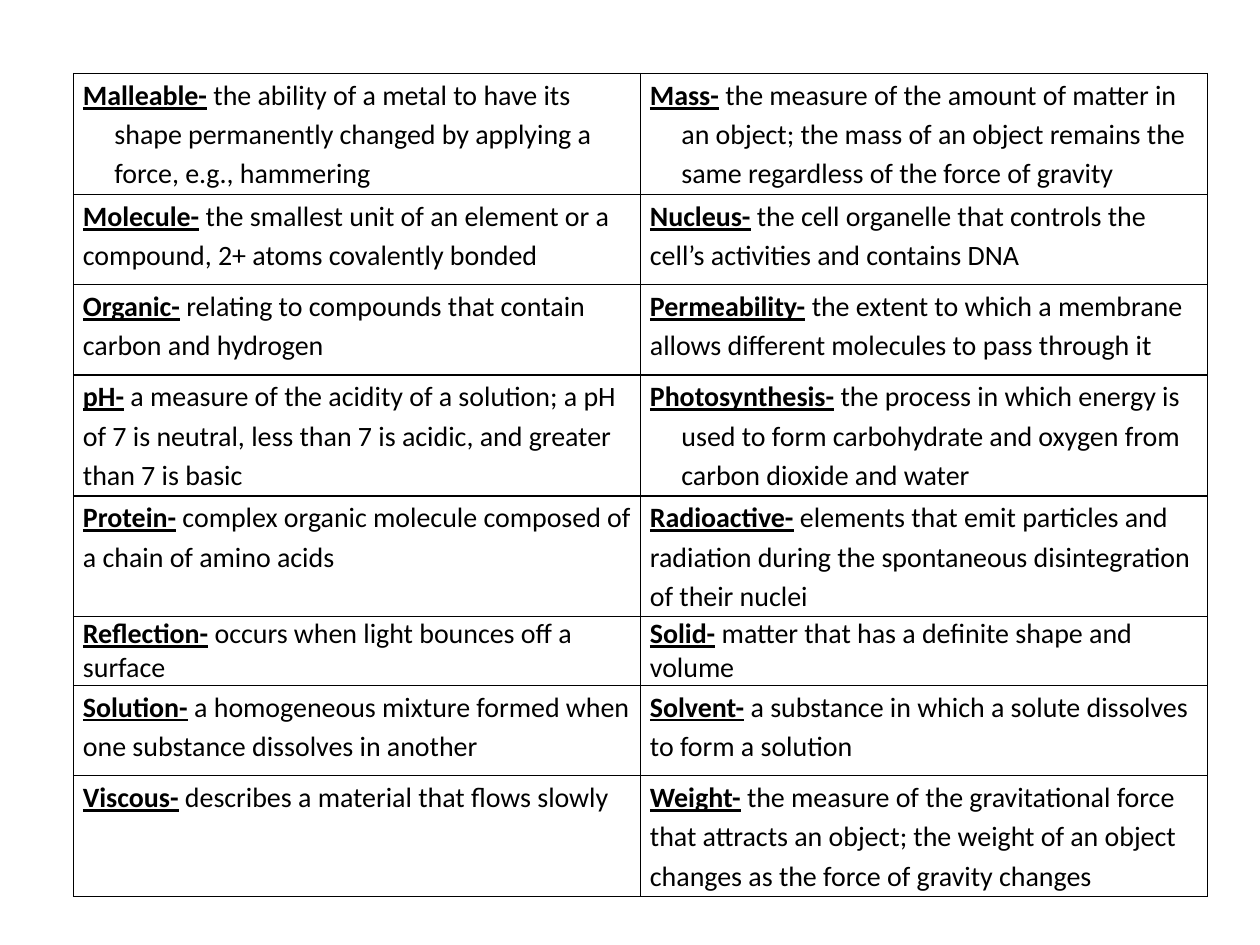
import pptx
import pptx.util
import pptx.dml.color
import pptx.oxml
import pptx.oxml.ns

Pt = pptx.util.Pt
COLORS = {"ink": "000000", "paper": "FFFFFF"}
FONT, FONT_SIZE = "Calibri", 16
LEFT, TOP, COLUMN_WIDTH = 42, 42, 324
INSET, HANG, BORDER = 5.4, 18, 1
TALL, MEDIUM, SHORT = 69.1, 51.6, 31
SPACING = 1.15

# Each row: height, line spacing, then (term, definition, hanging indent) per cell
ROWS = [
    (TALL, SPACING, [
        ("Malleable-", "the ability of a metal to have its shape permanently "
         "changed by applying a force, e.g., hammering", True),
        ("Mass-", "the measure of the amount of matter in an object; the mass of an "
         "object remains the same regardless of the force of gravity", True)]),
    (MEDIUM, SPACING, [
        ("Molecule-", "the smallest unit of an element or a compound, "
         "2+ atoms covalently bonded", False),
        ("Nucleus-", "the cell organelle that controls the cell’s activities "
         "and contains DNA", False)]),
    (MEDIUM, SPACING, [
        ("Organic-", "relating to compounds that contain carbon and hydrogen", False),
        ("Permeability-", "the extent to which a membrane allows different "
         "molecules to pass through it", False)]),
    (TALL, SPACING, [
        ("pH-", "a measure of the acidity of a solution; a pH of 7 is neutral, "
         "less than 7 is acidic, and greater than 7 is basic", False),
        ("Photosynthesis-", "the process in which energy is used to form "
         "carbohydrate and oxygen from carbon dioxide and water", True)]),
    (TALL, SPACING, [
        ("Protein-", "complex organic molecule composed of a chain of amino acids", False),
        ("Radioactive-", "elements that emit particles and radiation during the "
         "spontaneous disintegration of their nuclei", False)]),
    (SHORT, None, [
        ("Reflection-", "occurs when light bounces off a surface", False),
        ("Solid-", "matter that has a definite shape and volume", False)]),
    (MEDIUM, SPACING, [
        ("Solution-", "a homogeneous mixture formed when one substance "
         "dissolves in another", False),
        ("Solvent-", "a substance in which a solute dissolves to form a solution", False)]),
    (TALL, SPACING, [
        ("Viscous-", "describes a material that flows slowly", False),
        ("Weight-", "the measure of the gravitational force that attracts an object; "
         "the weight of an object changes as the force of gravity changes", False)]),
]


def rgb(name):
    return pptx.dml.color.RGBColor.from_string(COLORS[name])


def add_borders(cell):
    properties = cell._tc.get_or_add_tcPr()
    for position, side in enumerate(("lnL", "lnR", "lnT", "lnB")):
        properties.insert(position, pptx.oxml.parse_xml(
            f'<a:{side} {pptx.oxml.ns.nsdecls("a")} w="{Pt(BORDER)}"><a:solidFill>'
            f'<a:srgbClr val="{COLORS["ink"]}"/></a:solidFill></a:{side}>'))


def write_entry(cell, term, definition, hanging, spacing):
    cell.margin_left = cell.margin_right = Pt(INSET)
    cell.margin_top = cell.margin_bottom = 0
    para = cell.text_frame.paragraphs[0]
    para.line_spacing = spacing
    para.font.name, para.font.size = FONT, Pt(FONT_SIZE)
    para.font.color.rgb = rgb("ink")
    if hanging:
        properties = para._p.get_or_add_pPr()
        properties.set("marL", str(Pt(HANG)))
        properties.set("indent", str(-Pt(HANG)))
    for text, marked in ((term, True), (" " + definition, False)):
        span = para.add_run()
        span.text = text
        span.font.name, span.font.size = FONT, Pt(FONT_SIZE)
        span.font.color.rgb = rgb("ink")
        span.font.bold = span.font.underline = marked


def main():
    deck = pptx.Presentation()
    deck.slide_width, deck.slide_height = Pt(720), Pt(540)
    page = deck.slides.add_slide(deck.slide_layouts[6])
    height = sum(row[0] for row in ROWS)
    glossary = page.shapes.add_table(
        len(ROWS), 2, Pt(LEFT), Pt(TOP), Pt(2 * COLUMN_WIDTH), Pt(height)).table
    glossary.first_row = glossary.horz_banding = False
    for column in glossary.columns:
        column.width = Pt(COLUMN_WIDTH)
    for row, (row_height, spacing, entries) in zip(glossary.rows, ROWS):
        row.height = Pt(row_height)
        for cell, (term, definition, hanging) in zip(row.cells, entries):
            cell.fill.solid()
            cell.fill.fore_color.rgb = rgb("paper")
            add_borders(cell)
            write_entry(cell, term, definition, hanging, spacing)
    deck.save("out.pptx")


if __name__ == "__main__":
    main()
